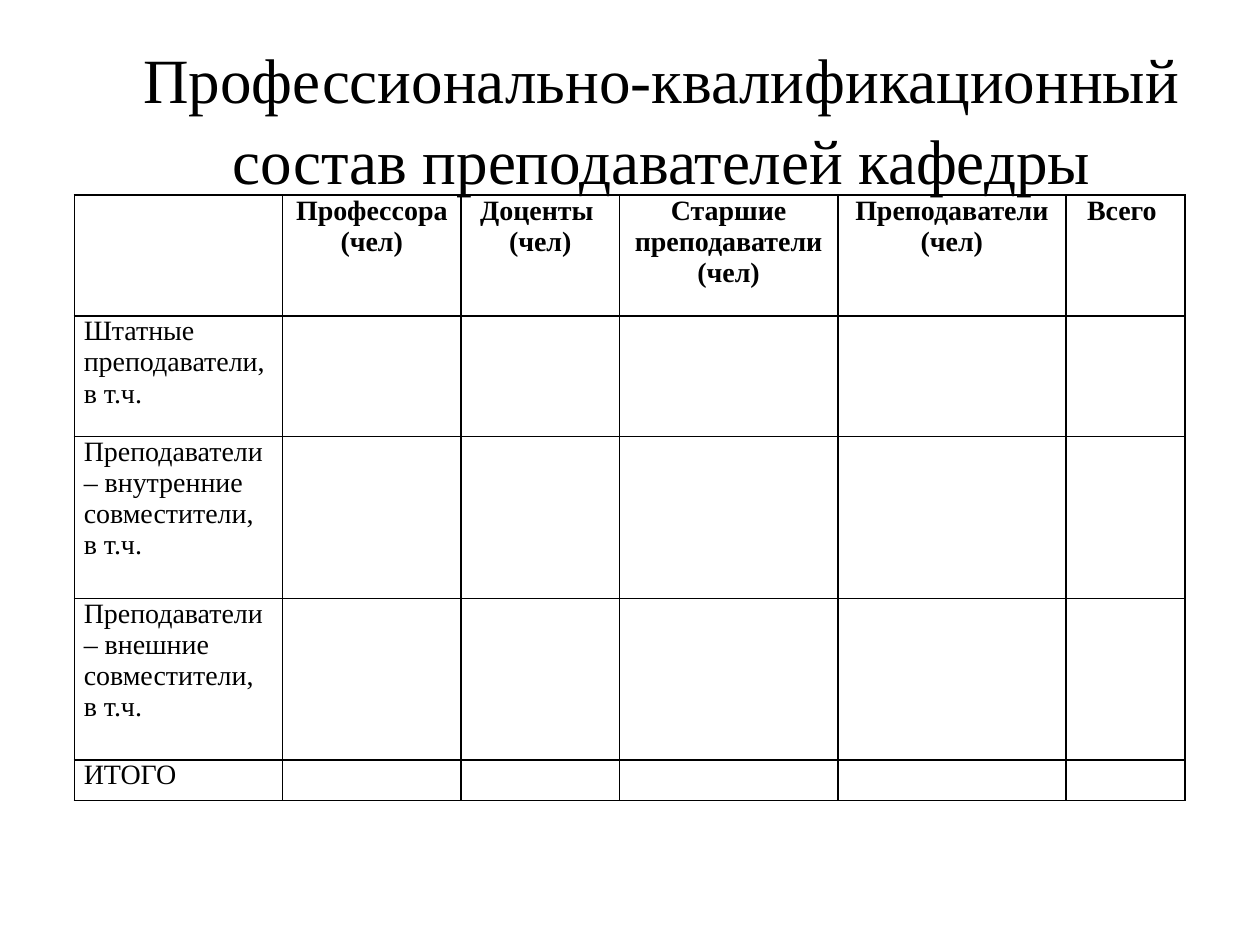
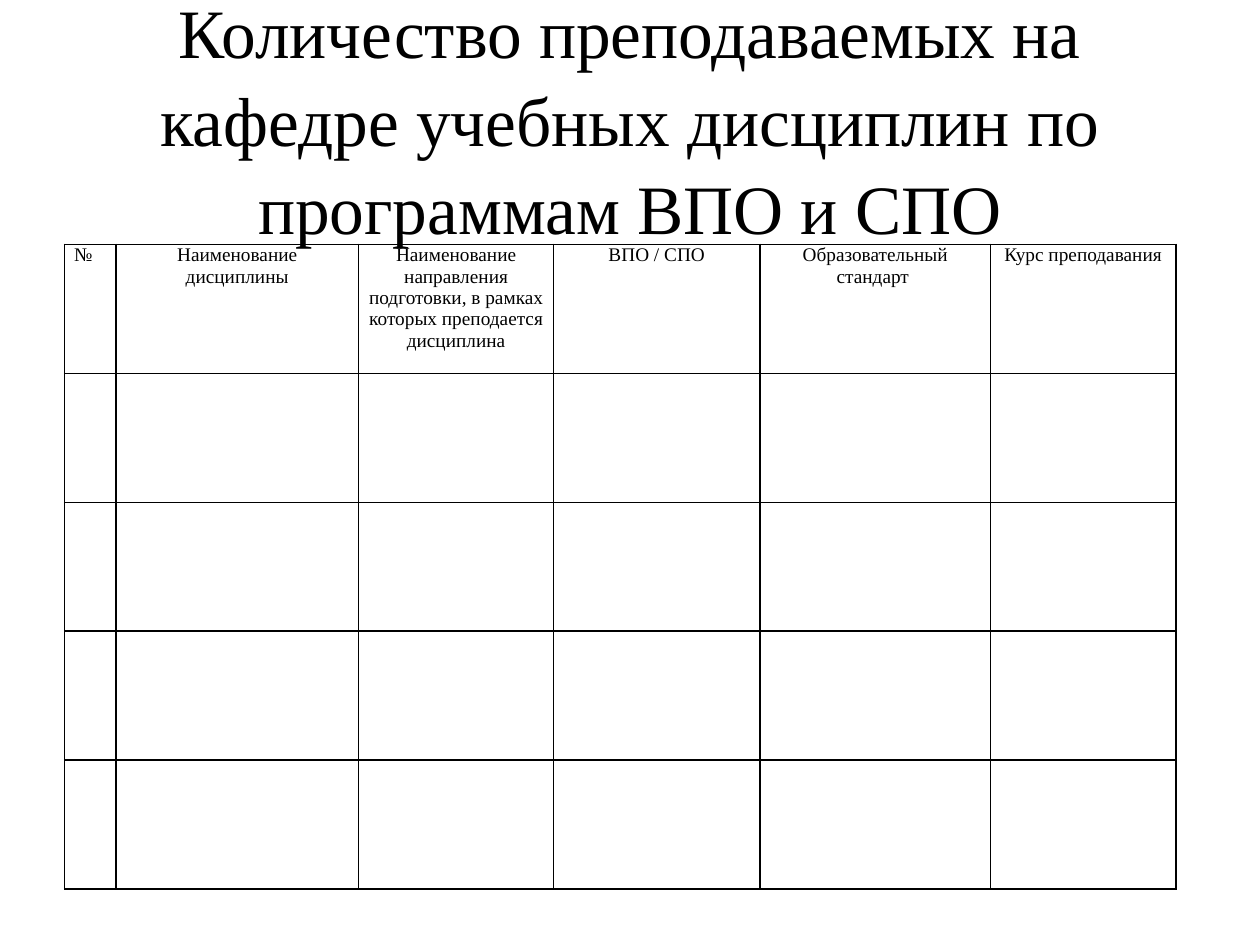
from lxml import etree
from pptx import Presentation
from pptx import util as u
from pptx.enum import text
from pptx.oxml import ns

Pt = u.Pt
ALIGN = text.PP_ALIGN
COLORS = {"ink": "000000", "paper": "FFFFFF"}
FONT = "Times New Roman"
BORDER_WIDTH = Pt(1)


def write(frame, content, size, align=ALIGN.LEFT, bold=False, spacing=None):
    """Fill a text frame with one paragraph for each line of content."""
    frame.text = content
    for paragraph in frame.paragraphs:
        paragraph.alignment = align
        paragraph.line_spacing = spacing
        for run in paragraph.runs:
            run.font.name = FONT
            run.font.size = Pt(size)
            run.font.bold = bold
            run.font.color.rgb = ns_color(COLORS["ink"])


def add_borders(cell):
    properties = cell._tc.get_or_add_tcPr()
    for position, side in enumerate(("lnL", "lnR", "lnT", "lnB")):
        line = etree.Element(ns.qn(f"a:{side}"), w=str(BORDER_WIDTH))
        fill = etree.SubElement(line, ns.qn("a:solidFill"))
        etree.SubElement(fill, ns.qn("a:srgbClr"), val=COLORS["ink"])
        properties.insert(position, line)


from pptx.dml import color
ns_color = color.RGBColor.from_string

staff = {
    "title": "Профессионально-квалификационный состав преподавателей кафедры",
    "title_size": 36,
    "title_indent": 36,
    "origin": (42.5, 111.5),
    "columns": [119, 102, 90.5, 124.8, 130.4, 67.9],
    "rows": [69, 69, 92.4, 92.4, 23.2],
    "header": ["", "Профессора (чел)", "Доценты \n(чел)",
               "Старшие преподаватели (чел)", "Преподаватели (чел)", "Всего "],
    "header_bold": True,
    "row_labels": ["Штатные преподаватели, в т.ч.",
                   "Преподаватели – внутренние совместители, в т.ч.",
                   "Преподаватели – внешние совместители, в т.ч.",
                   "ИТОГО"],
    "size": 16,
}
disciplines = {
    "title": "Количество преподаваемых на кафедре учебных дисциплин "
             "по программам ВПО и СПО",
    "title_size": 39.6,
    "title_indent": 0,
    "origin": (36.9, 139.7),
    "columns": [29.3, 138.8, 111.4, 117.9, 131.8, 105.9],
    "rows": [73.7] * 5,
    "header": ["№", "Наименование дисциплины",
               "Наименование направления подготовки, в рамках которых "
               "преподается дисциплина",
               "ВПО / СПО", "Образовательный стандарт ", "Курс преподавания"],
    "header_bold": False,
    "row_labels": [""] * 4,
    "size": 11,
}

deck = Presentation()
deck.slide_width, deck.slide_height = Pt(720), Pt(540)
title_only = deck.slide_layouts[5]

for topic in (staff, disciplines):
    slide = deck.slides.add_slide(title_only)
    slide.background.fill.solid()
    slide.background.fill.fore_color.rgb = ns_color(COLORS["paper"])

    title = slide.shapes.title
    title.left, title.top, title.width, title.height = Pt(36), Pt(21.6), Pt(648), Pt(90)
    heading = title.text_frame
    heading.word_wrap = True
    heading.auto_size = text.MSO_AUTO_SIZE.NONE
    heading.vertical_anchor = text.MSO_ANCHOR.MIDDLE
    write(heading, topic["title"], topic["title_size"], ALIGN.CENTER, spacing=1.06)
    heading.paragraphs[0]._p.get_or_add_pPr().set("marL", str(Pt(topic["title_indent"])))

    columns, rows = topic["columns"], topic["rows"]
    left, top = topic["origin"]
    table = slide.shapes.add_table(len(rows), len(columns), Pt(left), Pt(top),
                                   Pt(sum(columns)), Pt(sum(rows))).table
    table.first_row = table.horz_banding = False
    for column, width in zip(table.columns, columns):
        column.width = Pt(width)
    for row, height in zip(table.rows, rows):
        row.height = Pt(height)

    for cell in table.iter_cells():
        cell.margin_left = cell.margin_right = Pt(5.4)
        cell.margin_top = cell.margin_bottom = 0
        cell.fill.background()
        add_borders(cell)

    for index, label in enumerate(topic["header"]):
        align = ALIGN.CENTER if index else ALIGN.JUSTIFY
        write(table.cell(0, index).text_frame, label, topic["size"], align,
              bold=topic["header_bold"])
    for index, label in enumerate(topic["row_labels"], start=1):
        write(table.cell(index, 0).text_frame, label, topic["size"])

deck.save("out.pptx")
